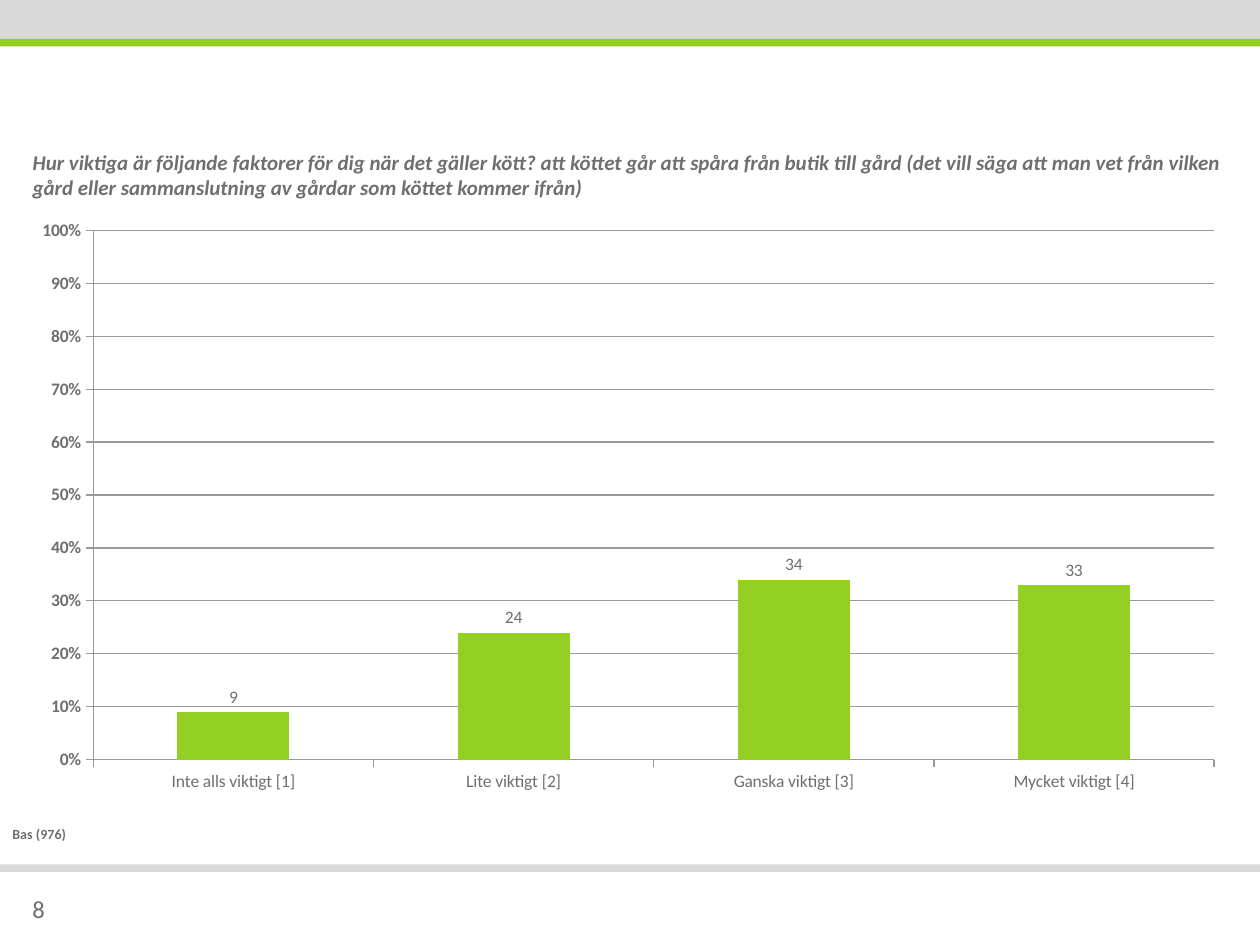
from dataclasses import dataclass

from lxml.etree import SubElement
from pptx import Presentation
from pptx.chart.data import CategoryChartData
from pptx.dml.color import RGBColor
from pptx.enum.chart import XL_CHART_TYPE as ChartType
from pptx.enum.chart import XL_LABEL_POSITION as LabelPosition
from pptx.enum.chart import XL_TICK_MARK as TickMark
from pptx.enum.shapes import MSO_SHAPE as Preset
from pptx.enum.text import MSO_ANCHOR as Anchor
from pptx.oxml.ns import qn
from pptx.slide import Slide
from pptx.util import Inches, Pt

WHITE = RGBColor(0xFF, 0xFF, 0xFF)
GREY = RGBColor(0xD9, 0xD9, 0xD9)
GREEN = RGBColor(0x93, 0xD0, 0x23)
TEXT = RGBColor(0x6D, 0x6F, 0x71)
RULE = RGBColor(0x9A, 0x9A, 0x9A)
FONT = "Calibri"
PAGE_WIDTH, PAGE_HEIGHT = 10, 7.5
MARGIN = 0.16
QUESTION = (
    "Hur viktiga är följande faktorer för dig när det gäller kött? "
    "att köttet går att spåra från butik till gård (det vill säga att man vet "
    "från vilken gård eller sammanslutning av gårdar som köttet kommer ifrån)"
)
ANSWERS = {
    "Inte alls viktigt [1]": 9,
    "Lite viktigt [2]": 24,
    "Ganska viktigt [3]": 34,
    "Mycket viktigt [4]": 33,
}


@dataclass(frozen=True)
class Band:
    top: float
    height: float
    color: RGBColor


@dataclass(frozen=True)
class Area:
    left: float
    top: float
    width: float
    height: float

    def lengths(self) -> list:
        return [Inches(n) for n in (self.left, self.top, self.width, self.height)]


BANDS = (
    Band(0, 0.31, GREY),
    Band(6.86, 0.06, GREY),
    Band(0.31, 0.06, GREEN),
)
PLOT_SHARES = {"x": 0.06, "y": 0.04, "w": 0.92, "h": 0.89}


def style_font(font, size: float, bold: bool = False, italic: bool = False) -> None:
    font.name = FONT
    font.size = Pt(size)
    font.bold = bold
    font.italic = italic
    font.color.rgb = TEXT


def add_band(page: Slide, band: Band) -> None:
    area = Area(0, band.top, PAGE_WIDTH, band.height)
    shape = page.shapes.add_shape(Preset.RECTANGLE, *area.lengths())
    shape.shadow.inherit = False
    shape.fill.solid()
    shape.fill.fore_color.rgb = band.color
    shape.line.fill.background()


def add_text(page: Slide, text: str, area: Area, *, size: float, bold: bool = False,
             italic: bool = False, anchor: Anchor = Anchor.TOP) -> None:
    frame = page.shapes.add_textbox(*area.lengths()).text_frame
    frame.word_wrap = True
    frame.vertical_anchor = anchor
    span = frame.paragraphs[0].add_run()
    span.text = text
    style_font(span.font, size, bold, italic)


def place_plot(chart) -> None:
    plot_area = chart.plots[0]._element.getparent()
    layout = plot_area.find(qn("c:layout"))
    if layout is None:
        layout = SubElement(plot_area, qn("c:layout"))
        plot_area.insert(0, layout)
    manual = SubElement(layout, qn("c:manualLayout"))
    SubElement(manual, qn("c:layoutTarget")).set("val", "inner")
    for side in "xy":
        SubElement(manual, qn(f"c:{side}Mode")).set("val", "edge")
    for side, share in PLOT_SHARES.items():
        SubElement(manual, qn(f"c:{side}")).set("val", str(share))


def add_answer_chart(page: Slide, area: Area) -> None:
    data = CategoryChartData()
    data.categories = list(ANSWERS)
    data.add_series("Series 1", list(ANSWERS.values()))
    chart = page.shapes.add_chart(
        ChartType.COLUMN_CLUSTERED, *area.lengths(), data).chart
    chart.has_legend = False
    chart.has_title = False
    style_font(chart.font, 18)
    place_plot(chart)

    plot = chart.plots[0]
    plot.gap_width = 150
    plot.vary_by_categories = False
    series = plot.series[0]
    series.format.fill.solid()
    series.format.fill.fore_color.rgb = GREEN
    labels = series.data_labels
    labels.show_value = True
    labels.position = LabelPosition.OUTSIDE_END
    style_font(labels.font, 10)

    values = chart.value_axis
    values.minimum_scale, values.maximum_scale, values.major_unit = 0, 100, 10
    values.has_major_gridlines = True
    values.major_gridlines.format.line.color.rgb = RULE
    values.major_gridlines.format.line.width = Pt(0.75)
    values.tick_labels.number_format = '0"%"'
    values.tick_labels.number_format_is_linked = False
    for axis, bold in ((chart.category_axis, False), (values, True)):
        axis.major_tick_mark = TickMark.OUTSIDE
        axis.format.line.color.rgb = RULE
        axis.format.line.width = Pt(0.75)
        style_font(axis.tick_labels.font, 10, bold)


def main() -> None:
    deck = Presentation()
    deck.slide_width, deck.slide_height = Inches(PAGE_WIDTH), Inches(PAGE_HEIGHT)
    page = deck.slides.add_slide(deck.slide_layouts[6])
    page.background.fill.solid()
    page.background.fill.fore_color.rgb = WHITE
    for band in BANDS:
        add_band(page, band)
    add_text(page, "8", Area(MARGIN, 6.95, 0.77, 0.52), size=14, anchor=Anchor.MIDDLE)
    add_answer_chart(page, Area(MARGIN, 1.64, 9.67, 4.72))
    add_text(page, QUESTION, Area(MARGIN, 1.14, 9.69, 0.57),
             size=12, bold=True, italic=True)
    add_text(page, "Bas (976)", Area(0, 6.5, PAGE_WIDTH, 0.24), size=8, bold=True)
    deck.save("out.pptx")


if __name__ == "__main__":
    main()
